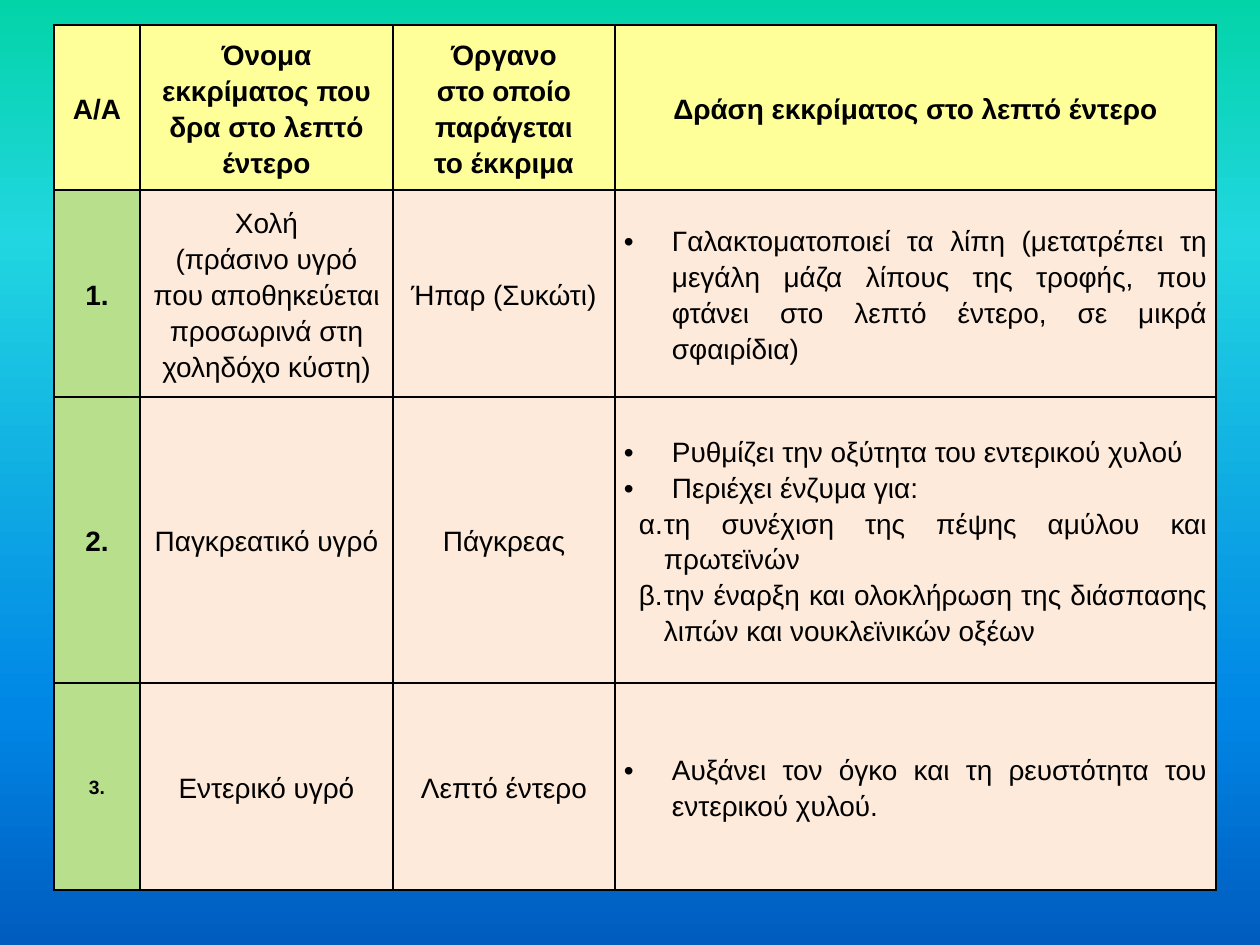
import pptx
import pptx.util
import pptx.dml.color
import pptx.enum.text
import pptx.oxml
import pptx.oxml.ns
import copy

SCALE = 914400 / 126
COLORS = {"head": "FFFF99", "num": "B8E08C", "body": "FDEADA", "ink": "000000"}
SKY = [(0, "03D4A8"), (0.25, "21D6E0"), (0.75, "0087E6"), (1, "005CBF")]
COLS = [86, 253, 222, 601]
ROWS = [165, 207, 286, 207]
ALIGN = pptx.enum.text.PP_ALIGN
CELL = {
    "margin_left": 9, "margin_right": 9, "margin_top": 0, "margin_bottom": 0,
}
# Paragraph kinds: alignment, left margin, first-line indent, bullet
KINDS = {
    "mid": (ALIGN.CENTER, 0, 0, None),
    "dot": (ALIGN.JUSTIFY, 48, -48, "•"),
    "sub": (ALIGN.JUSTIFY, 40, -25, None),
}
TEXTS = [
    [
        ["Α/Α"],
        ["Όνομα εκκρίματος που δρα στο λεπτό έντερο"],
        ["Όργανο", "στο οποίο παράγεται", "το έκκριμα"],
        ["Δράση εκκρίματος στο λεπτό έντερο"],
    ],
    [
        ["1."],
        ["Χολή", "(πράσινο υγρό που αποθηκεύεται προσωρινά στη χοληδόχο κύστη)"],
        ["Ήπαρ (Συκώτι)"],
        [("dot", "Γαλακτοματοποιεί τα λίπη (μετατρέπει τη μεγάλη μάζα λίπους "
                 "της τροφής, που φτάνει στο λεπτό έντερο, σε μικρά σφαιρίδια)")],
    ],
    [
        ["2."],
        ["Παγκρεατικό υγρό"],
        ["Πάγκρεας"],
        [
            ("dot", "Ρυθμίζει την οξύτητα του εντερικού χυλού"),
            ("dot", "Περιέχει ένζυμα για:"),
            ("sub", "α.\tτη συνέχιση της πέψης αμύλου και πρωτεϊνών"),
            ("sub", "β.\tτην έναρξη και ολοκλήρωση της διάσπασης λιπών και "
                    "νουκλεϊνικών οξέων"),
        ],
    ],
    [
        ["3."],
        ["Εντερικό υγρό"],
        ["Λεπτό έντερο"],
        [("dot", "Αυξάνει τον όγκο και τη ρευστότητα του εντερικού χυλού.")],
    ],
]


def px(num):
    return pptx.util.Emu(round(num * SCALE))


def rgb(name):
    return pptx.dml.color.RGBColor.from_string(COLORS.get(name, name))


def apply(item, values):
    for key, value in values.items():
        setattr(item, key, value)


def add_node(parent, tag, **attrs):
    node = pptx.oxml.parse_xml(f"<a:{tag} {pptx.oxml.ns.nsdecls('a')}/>")
    for key, value in attrs.items():
        node.set(key, str(value))
    parent.append(node)
    return node


def paint_sky(slide):
    fill = slide.background.fill
    fill.gradient()
    fill.gradient_angle = 270
    stops = slide.element.xpath(".//a:gsLst")[0]
    while len(stops) < len(SKY):
        stops.append(copy.deepcopy(stops[0]))
    for stop, (place, color) in zip(fill.gradient_stops, SKY):
        apply(stop, {"position": place})
        stop.color.rgb = rgb(color)


def add_edges(cell):
    props = cell._tc.get_or_add_tcPr()
    for side in "LRTB":
        line = add_node(props, "ln" + side, w=pptx.util.Pt(1))
        add_node(add_node(line, "solidFill"), "srgbClr", val=COLORS["ink"])


def add_text(para, kind, text, size, bold):
    align, left, first, mark = KINDS[kind]
    apply(para, {"alignment": align, "line_spacing": 1.15})
    props = para._p.get_or_add_pPr()
    props.set("marL", str(px(left)))
    props.set("indent", str(px(first)))
    if mark:
        add_node(props, "buFont", typeface="Arial")
        add_node(props, "buChar", char=mark)
    run = para.add_run()
    run.text = text
    apply(run.font, {"name": "Arial", "size": pptx.util.Pt(size), "bold": bold})
    run.font.color.rgb = rgb("ink")


def fill_cell(cell, items, color, size, bold):
    apply(cell, {key: px(num) for key, num in CELL.items()})
    cell.vertical_anchor = pptx.enum.text.MSO_ANCHOR.MIDDLE
    add_edges(cell)
    cell.fill.solid()
    cell.fill.fore_color.rgb = rgb(color)
    frame = cell.text_frame
    for num, item in enumerate(items):
        para = frame.add_paragraph() if num else frame.paragraphs[0]
        kind, text = ("mid", item) if isinstance(item, str) else item
        add_text(para, kind, text, size, bold)


def add_grid(slide):
    frame = slide.shapes.add_table(
        len(ROWS), len(COLS), px(54), px(25), px(sum(COLS)), px(sum(ROWS)))
    table = frame.table
    apply(table, {"first_row": False, "horz_banding": False})
    for col, width in zip(table.columns, COLS):
        col.width = px(width)
    for row, height in zip(table.rows, ROWS):
        row.height = px(height)
    for i, line in enumerate(TEXTS):
        for j, items in enumerate(line):
            color = "head" if i == 0 else "num" if j == 0 else "body"
            size = 11 if items == ["3."] else 16
            fill_cell(table.cell(i, j), items, color, size, color != "body")


def main():
    deck = pptx.Presentation()
    apply(deck, {"slide_width": px(1260), "slide_height": px(945)})
    slide = deck.slides.add_slide(deck.slide_layouts[6])
    # Background
    paint_sky(slide)
    # Table of secretions
    add_grid(slide)
    deck.save("out.pptx")


if __name__ == "__main__":
    main()
